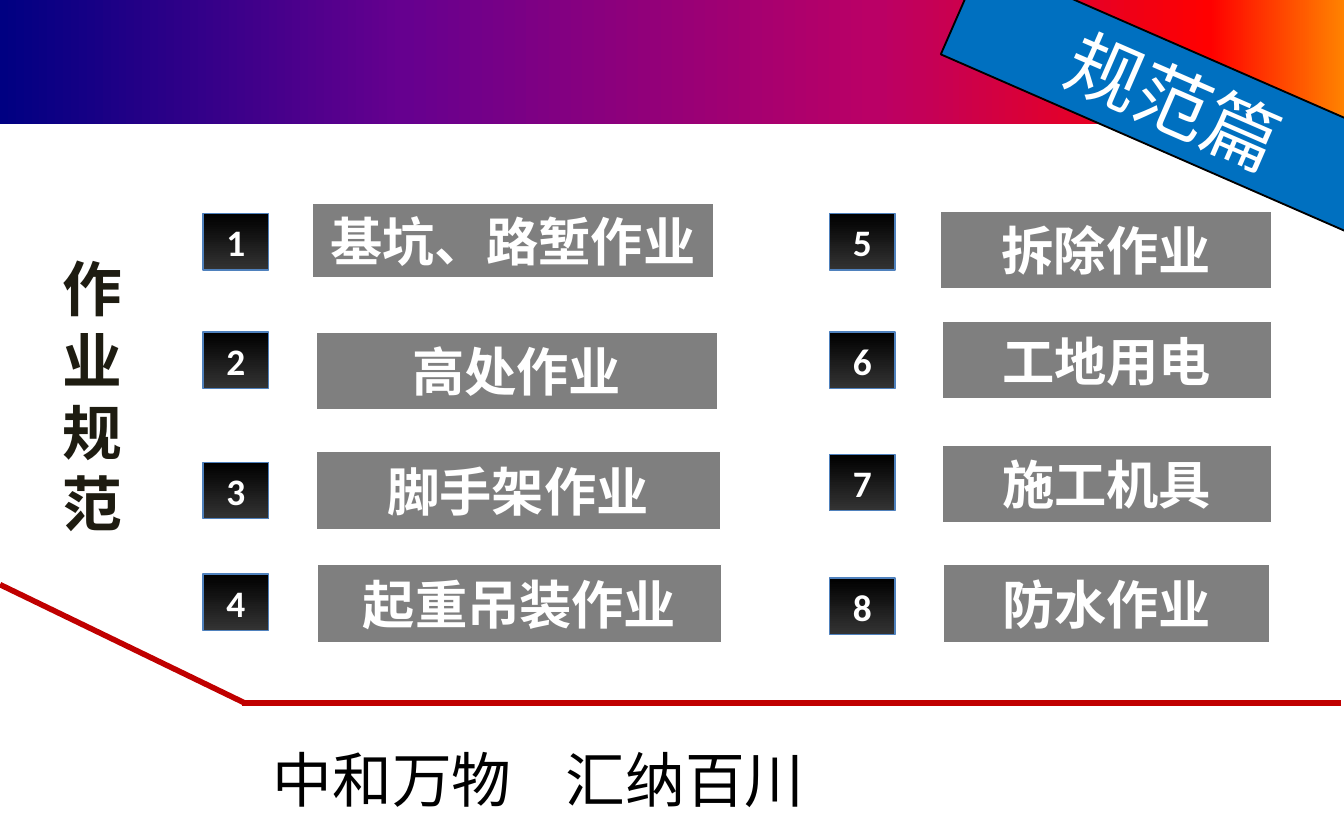
from lxml import etree
from pptx import Presentation
from pptx.dml.color import RGBColor
from pptx.enum import shapes, text
from pptx.oxml.ns import qn
from pptx.util import Inches, Pt

SANS = "Noto Sans CJK SC"
TITLE = "作业规范"
RIBBON = "规范篇"
MOTTO = "中和万物\t汇纳百川"
BANNER_STOPS = [(0, "000082"), (30, "66008F"), (65, "BA0066"), (90, "FF0000"), (100, "FF8200")]
BADGE_STOPS = [(0, "000000"), (100, "333333")]
RULES = [((1.8, 5.23), (9.98, 5.23)), ((0, 4.35), (1.82, 5.23))]

# Each column: badge left, then (badge top, topic, topic box)
COLUMNS = [
    (1.51, [
        (1.59, "基坑、路堑作业", (2.32, 1.51, 2.99, 0.56)),
        (2.47, "高处作业", (2.35, 2.47, 2.99, 0.58)),
        (3.44, "脚手架作业", (2.35, 3.36, 3.01, 0.58)),
        (4.27, "起重吊装作业", (2.36, 4.2, 3.01, 0.58)),
    ]),
    (6.17, [
        (1.59, "拆除作业", (7, 1.57, 2.46, 0.58)),
        (2.47, "工地用电", (7.01, 2.39, 2.45, 0.58)),
        (3.38, "施工机具", (7.01, 3.31, 2.45, 0.58)),
        (4.3, "防水作业", (7.02, 4.2, 2.43, 0.58)),
    ]),
]


def color(hex_code):
    return RGBColor.from_string(hex_code)


def child(parent, tag, **attributes):
    return etree.SubElement(parent, qn(tag), attributes)


def write(shape, content, size, hex_code, name=SANS, bold=False, wrap=False,
          align=text.PP_ALIGN.CENTER):
    """Fill a shape with text, one paragraph per line, centred vertically."""
    frame = shape.text_frame
    frame.text = content
    frame.word_wrap = wrap
    frame.vertical_anchor = text.MSO_ANCHOR.MIDDLE
    for paragraph in frame.paragraphs:
        paragraph.alignment = align
        font = paragraph.font
        font.size, font.name, font.bold = Pt(size), name, bold
        font.color.rgb = color(hex_code)
        for run in paragraph.runs:
            child(run._r.get_or_add_rPr(), "a:ea", typeface=name)


def add_box(slide, box, line=None, width=0.75):
    shape = slide.shapes.add_shape(shapes.MSO_SHAPE.RECTANGLE, *map(Inches, box))
    shape.shadow.inherit = False
    if line:
        shape.line.color.rgb = color(line)
        shape.line.width = Pt(width)
    else:
        shape.line.fill.background()
    return shape


def solid(shape, hex_code, opacity=100):
    shape.fill.solid()
    shape.fill.fore_color.rgb = color(hex_code)
    if opacity < 100:
        srgb = shape._element.spPr.find(qn("a:solidFill"))[0]
        child(srgb, "a:alpha", val=str(opacity * 1000))


def gradient(shape, stops, angle):
    """Linear gradient of any number of stops; angle in degrees clockwise."""
    shape.fill.gradient()
    fill = shape._element.spPr.find(qn("a:gradFill"))
    for part in list(fill):
        fill.remove(part)
    stop_list = child(fill, "a:gsLst")
    for position, hex_code in stops:
        stop = child(stop_list, "a:gs", pos=str(position * 1000))
        child(stop, "a:srgbClr", val=hex_code)
    child(fill, "a:lin", ang=str(angle * 60000), scaled="0")


def add_rule(slide, start, end):
    rule = slide.shapes.add_connector(
        shapes.MSO_CONNECTOR.STRAIGHT, *map(Inches, start + end))
    rule.line.color.rgb = color("C00000")
    rule.line.width = Pt(3)
    child(rule._element.spPr, "a:effectLst")


def add_title(slide):
    title = slide.shapes.title
    title.left, title.top, title.width, title.height = map(Inches, (0.35, 1.81, 0.67, 2.26))
    write(title, "\n".join(TITLE), 32, "1E1C11", "Noto Sans CJK JP", bold=True)
    title.text_frame.auto_size = text.MSO_AUTO_SIZE.NONE
    for paragraph in title.text_frame.paragraphs:
        paragraph.line_spacing = Pt(38.5)
        for run in paragraph.runs:
            run._r.get_or_add_rPr().set("spc", "150")


def add_motto(slide):
    motto = slide.shapes.add_textbox(*map(Inches, (1.93, 5.47, 4.82, 0.64)))
    write(motto, MOTTO, 32, "000000", wrap=True, align=text.PP_ALIGN.LEFT)
    properties = motto.text_frame.paragraphs[0]._p.get_or_add_pPr()
    tabs = etree.Element(qn("a:tabLst"))
    child(tabs, "a:tab", pos=str(Inches(2.18)), algn="l")
    properties.insert(0, tabs)


def main():
    deck = Presentation()
    deck.slide_width, deck.slide_height = Inches(10), Inches(6.25)
    slide = deck.slides.add_slide(deck.slide_layouts[5])

    add_title(slide)
    add_motto(slide)
    gradient(add_box(slide, (0, 0, 10, 0.92)), BANNER_STOPS, 0)
    for start, end in RULES:
        add_rule(slide, start, end)

    number = 0
    for badge_left, rows in COLUMNS:
        for badge_top, topic, topic_box in rows:
            number += 1
            badge = add_box(slide, (badge_left, badge_top, 0.49, 0.42), "4F81BD")
            gradient(badge, BADGE_STOPS, 90)
            write(badge, str(number), 20, "FFFFFF", "Calibri", bold=True)
            label = add_box(slide, topic_box, "FFFFFF")
            solid(label, "000000", opacity=50)
            write(label, topic, 28, "FFFFFF", bold=True)

    ribbon = add_box(slide, (7.01, 0.36, 3.46, 0.77), "000000", 1)
    solid(ribbon, "0070C0")
    ribbon.rotation = 23.6
    write(ribbon, RIBBON, 40, "FFFFFF", wrap=True)
    deck.save("out.pptx")


if __name__ == "__main__":
    main()
